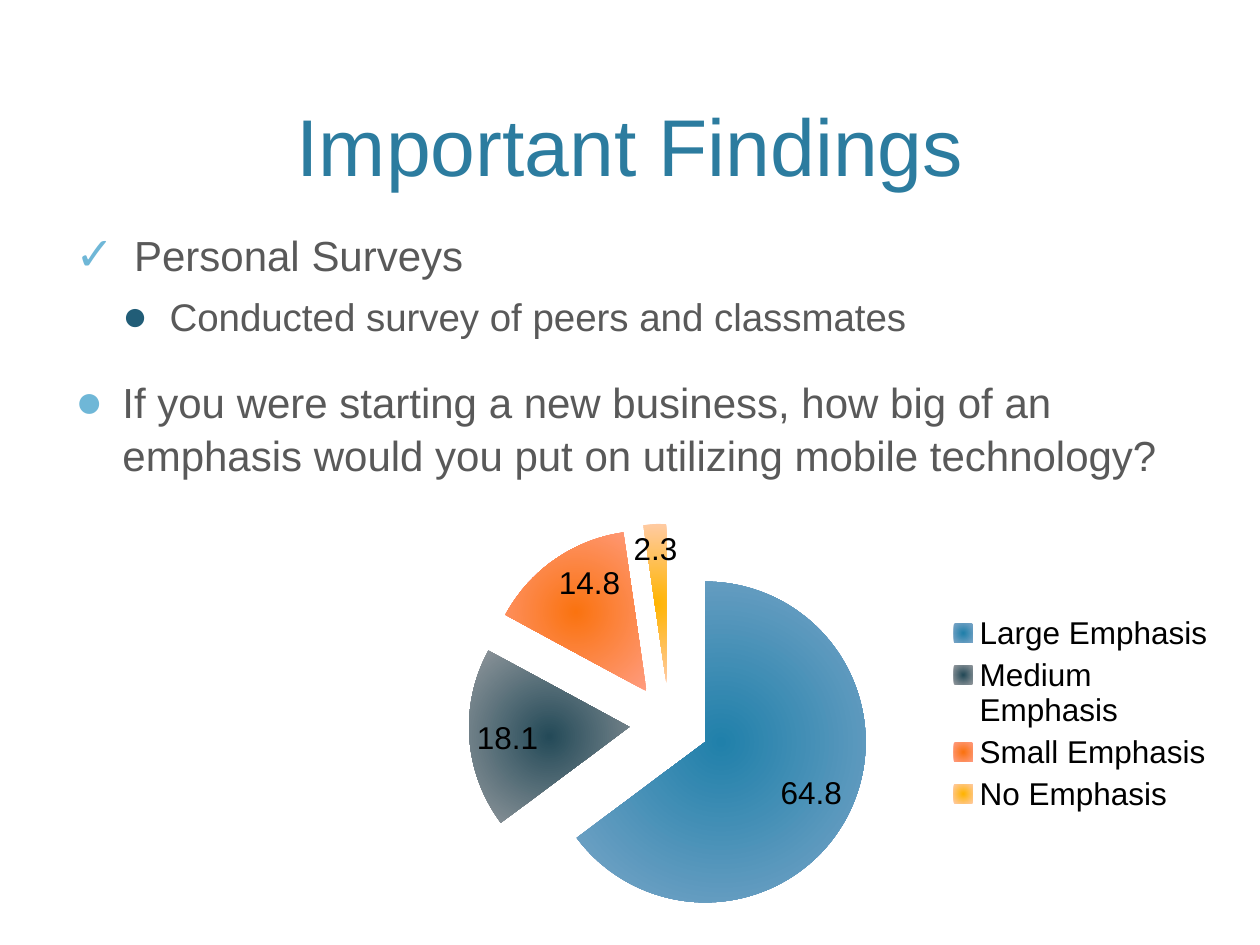
from lxml import etree
from pptx import Presentation, util as u
from pptx.chart.data import CategoryChartData
from pptx.dml.color import RGBColor
from pptx.enum import chart as charts, text
from pptx.oxml import parse_xml
from pptx.oxml.ns import nsdecls, qn

THEME = {
    "font": "Arial", "title": "2C7C9F", "body": "595959", "chart": "000000",
    "title_size": 46, "chart_size": 18, "bullet_scale": 110000,
    "levels": [
        {"size": 24, "margin": 0.95, "hang": 0.95, "before": 20, "bullet": "6FB7D7"},
        {"size": 22, "margin": 1.9, "hang": 0.95, "before": 6, "bullet": "215D77"},
    ],
}
TITLE = "Important Findings"
FINDINGS = [
    (0, "✓", " Personal Surveys"),
    (1, "●", "Conducted survey of peers and classmates"),
    (0, "●", "If you were starting a new business, how big of an emphasis "
             "would you put on utilizing mobile technology?"),
]
ANSWERS = [
    ("Large Emphasis", 64.8, "2080AA", "7BA6C8"),
    ("Medium Emphasis", 18.1, "244A58", "93999E"),
    ("Small Emphasis", 14.8, "FA7310", "FF9C80"),
    ("No Emphasis", 2.3, "FFB400", "FFCBA4"),
]
PLOT = {"x": 0.02, "y": 0.05, "w": 0.63, "h": 0.95}
PLACES = {
    "title": (1.52, 0.3, 22.35, 3.71),
    "findings": (1.27, 4.45, 22.86, 14.2),
    "survey": (7.82, 10.13, 16.94, 8.51),
}


def place(part):
    return [u.Cm(length) for length in PLACES[part]]


def style(font, size, color):
    for name, value in {"name": THEME["font"], "size": u.Pt(size)}.items():
        setattr(font, name, value)
    font.color.rgb = RGBColor.from_string(color)


def add_frame(slide, part, anchor):
    frame = slide.shapes.add_textbox(*place(part)).text_frame
    for name, value in {"word_wrap": True, "vertical_anchor": anchor}.items():
        setattr(frame, name, value)
    return frame


def add_bullet(paragraph, mark, level):
    props = paragraph._p.get_or_add_pPr()
    props.set("marL", str(u.Cm(level["margin"])))
    props.set("indent", str(-u.Cm(level["hang"])))
    color = etree.SubElement(props, qn("a:buClr"))
    etree.SubElement(color, qn("a:srgbClr"), val=level["bullet"])
    etree.SubElement(props, qn("a:buSzPct"), val=str(THEME["bullet_scale"]))
    etree.SubElement(props, qn("a:buFont"), typeface=THEME["font"])
    etree.SubElement(props, qn("a:buChar"), char=mark)


def add_findings(slide):
    frame = add_frame(slide, "findings", text.MSO_ANCHOR.TOP)
    for index, (depth, mark, words) in enumerate(FINDINGS):
        level = THEME["levels"][depth]
        paragraph = frame.paragraphs[0] if index == 0 else frame.add_paragraph()
        formats = {"level": depth, "space_before": u.Pt(level["before"]), "line_spacing": 1.05}
        for name, value in formats.items():
            setattr(paragraph, name, value)
        add_bullet(paragraph, mark, level)
        run = paragraph.add_run()
        run.text = words
        style(run.font, level["size"], THEME["body"])


def radial_fill(center, edge):
    return parse_xml(
        f'<a:gradFill {nsdecls("a")} rotWithShape="1"><a:gsLst>'
        f'<a:gs pos="0"><a:srgbClr val="{center}"/></a:gs>'
        f'<a:gs pos="100000"><a:srgbClr val="{edge}"/></a:gs></a:gsLst>'
        '<a:path path="circle"><a:fillToRect l="50000" t="50000" r="50000" b="50000"/></a:path>'
        '</a:gradFill>')


def set_plot_layout(chart):
    area = chart._chartSpace.find(".//" + qn("c:plotArea"))
    for old in area.findall(qn("c:layout")):
        area.remove(old)
    layout = etree.Element(qn("c:layout"))
    manual = etree.SubElement(layout, qn("c:manualLayout"))
    settings = {"layoutTarget": "inner", "xMode": "edge", "yMode": "edge", **PLOT}
    for name, value in settings.items():
        etree.SubElement(manual, qn("c:" + name), val=str(value))
    area.insert(0, layout)


def add_survey(slide):
    data = CategoryChartData()
    data.categories = [answer[0] for answer in ANSWERS]
    data.add_series("Series 1", [answer[1] for answer in ANSWERS])
    chart = slide.shapes.add_chart(charts.XL_CHART_TYPE.PIE, *place("survey"), data).chart
    style(chart.font, THEME["chart_size"], THEME["chart"])
    chart.has_title = False
    chart.has_legend = True
    chart.legend.position = charts.XL_LEGEND_POSITION.RIGHT
    chart.legend.include_in_layout = False
    set_plot_layout(chart)
    pie = chart.plots[0]
    pie.vary_by_categories = True
    series = pie.series[0]
    for index, (_, _, center, edge) in enumerate(ANSWERS):
        look = series.points[index].format
        look.line.fill.background()
        look.fill._xPr.insert(0, radial_fill(center, edge))
    explosion = etree.Element(qn("c:explosion"), val="25")
    series._element.find(qn("c:dPt")).addprevious(explosion)
    pie.has_data_labels = True
    labels = pie.data_labels
    formats = {"show_value": True, "show_percentage": False,
               "position": charts.XL_LABEL_POSITION.INSIDE_END}
    for name, value in formats.items():
        setattr(labels, name, value)
    style(labels.font, THEME["chart_size"], THEME["chart"])


def main():
    """Build the survey findings slide."""
    deck = Presentation()
    deck.slide_width, deck.slide_height = u.Cm(25.4), u.Cm(19.05)
    slide = deck.slides.add_slide(deck.slide_layouts[6])
    heading = add_frame(slide, "title", text.MSO_ANCHOR.BOTTOM).paragraphs[0]
    heading.alignment = text.PP_ALIGN.CENTER
    run = heading.add_run()
    run.text = TITLE
    style(run.font, THEME["title_size"], THEME["title"])
    add_findings(slide)
    add_survey(slide)
    deck.save("out.pptx")


if __name__ == "__main__":
    main()
